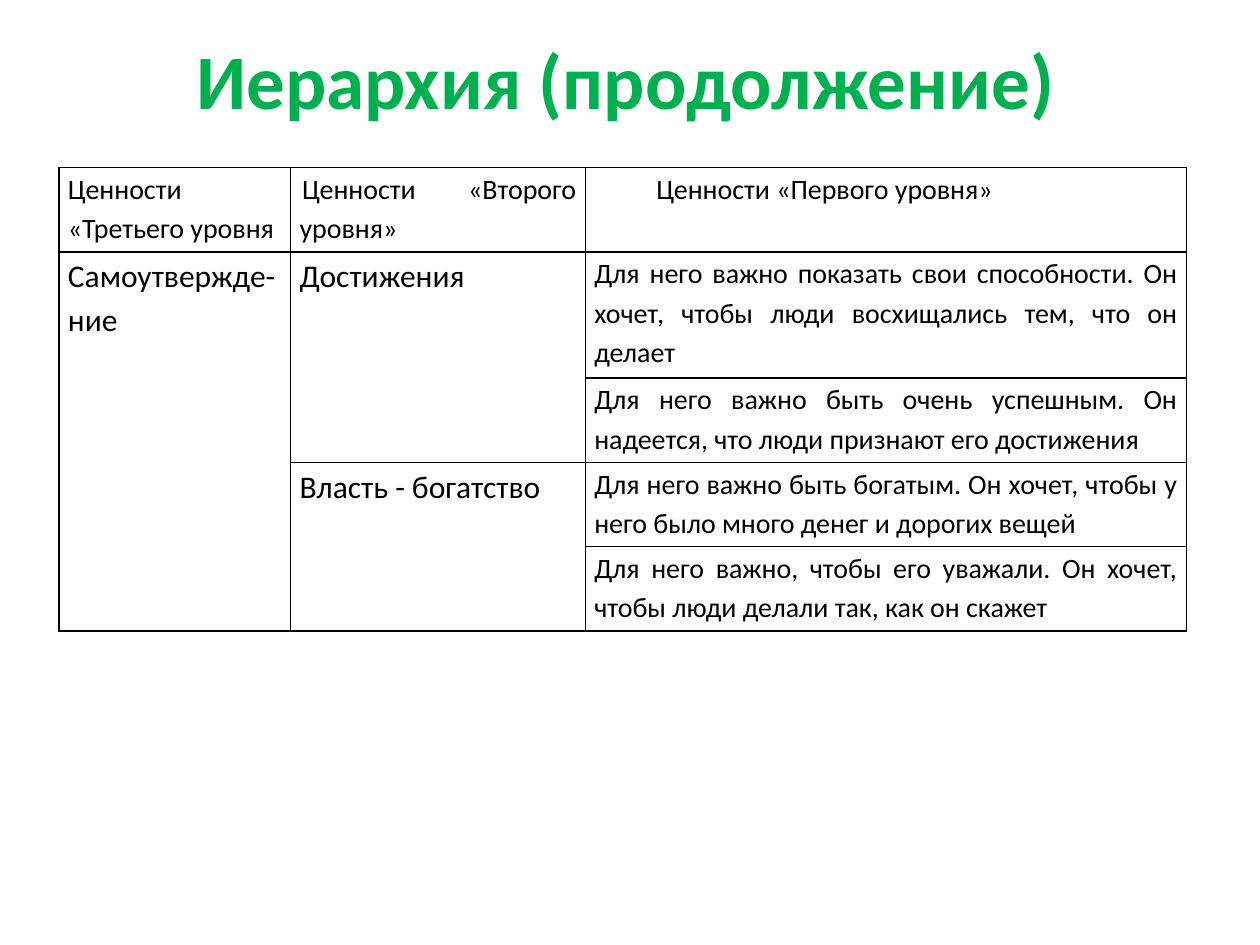
from dataclasses import dataclass

from lxml import etree
from pptx import Presentation
from pptx.dml.color import RGBColor
from pptx.enum import text
from pptx.oxml.ns import qn
from pptx.util import Cm, Pt


@dataclass(frozen=True)
class Theme:
    font: str = "Calibri"
    heading: RGBColor = RGBColor(0x00, 0xB0, 0x50)
    ink: RGBColor = RGBColor(0x00, 0x00, 0x00)
    heading_size: int = 44
    value_size: int = 18
    body_size: int = 16
    border: float = 1
    line_spacing: float = 1.15


@dataclass(frozen=True)
class Entry:
    row: int
    column: int
    wording: str
    size: int
    row_span: int = 1
    indent: float = 0


THEME = Theme()
COLUMN_WIDTHS = (4.67, 5.94, 12.12)
ROW_HEIGHTS = (1.7, 2.54, 1.7, 1.7, 1.7)

STATEMENTS = (
    "Для него важно показать свои способности. Он хочет, чтобы люди восхищались тем, что он делает",
    "Для него важно быть очень успешным. Он надеется, что люди признают его достижения",
    "Для него важно быть богатым. Он хочет, чтобы у него было много денег и дорогих вещей",
    "Для него важно, чтобы его уважали. Он хочет, чтобы люди делали так, как он скажет",
)

ENTRIES = [
    # Column headings
    Entry(0, 0, "Ценности «Третьего уровня", THEME.body_size),
    Entry(0, 1, "Ценности «Второго уровня»", THEME.body_size, indent=0.05),
    Entry(0, 2, "Ценности «Первого уровня»", THEME.body_size, indent=1.25),
    # Values of the third and second level
    Entry(1, 0, "Самоутвержде-ние", THEME.value_size, row_span=4),
    Entry(1, 1, "Достижения", THEME.value_size, row_span=2),
    Entry(3, 1, "Власть - богатство", THEME.value_size, row_span=2),
    # Statements of the first level
    *(Entry(row, 2, wording, THEME.body_size) for row, wording in enumerate(STATEMENTS, 1)),
]


def style_font(font, size: int, color: RGBColor, bold: bool = False) -> None:
    font.name = THEME.font
    font.size = Pt(size)
    font.bold = bold
    font.color.rgb = color


def frame_cell(cell) -> None:
    """Give a cell its margins, thin borders and no fill."""
    cell.margin_left = cell.margin_right = Cm(0.18)
    cell.margin_top = cell.margin_bottom = 0
    properties = cell._tc.get_or_add_tcPr()
    for side in ("a:lnL", "a:lnR", "a:lnT", "a:lnB"):
        line = etree.SubElement(properties, qn(side), w=str(Pt(THEME.border)))
        fill = etree.SubElement(line, qn("a:solidFill"))
        etree.SubElement(fill, qn("a:srgbClr"), val=str(THEME.ink))
    cell.fill.background()


def write_entry(table, entry: Entry) -> None:
    cell = table.cell(entry.row, entry.column)
    if entry.row_span > 1:
        cell.merge(table.cell(entry.row + entry.row_span - 1, entry.column))
    cell.text_frame.text = entry.wording
    paragraph = cell.text_frame.paragraphs[0]
    paragraph.alignment = text.PP_ALIGN.JUSTIFY
    paragraph.line_spacing = THEME.line_spacing
    if entry.indent:
        paragraph._p.get_or_add_pPr().set("indent", str(Cm(entry.indent)))
    style_font(paragraph.runs[0].font, entry.size, THEME.ink)


def add_heading(slide, wording: str) -> None:
    frame = slide.shapes.add_textbox(Cm(1.19), 0, Cm(22.86), Cm(3.18)).text_frame
    frame.word_wrap = True
    frame.vertical_anchor = text.MSO_ANCHOR.MIDDLE
    frame.text = wording
    paragraph = frame.paragraphs[0]
    paragraph.alignment = text.PP_ALIGN.CENTER
    style_font(paragraph.runs[0].font, THEME.heading_size, THEME.heading, bold=True)


def add_hierarchy(slide) -> None:
    table = slide.shapes.add_table(
        len(ROW_HEIGHTS), len(COLUMN_WIDTHS), Cm(1.19), Cm(3.38),
        Cm(sum(COLUMN_WIDTHS)), Cm(sum(ROW_HEIGHTS)),
    ).table
    table.first_row = table.horz_banding = False
    for column, width in zip(table.columns, COLUMN_WIDTHS):
        column.width = Cm(width)
    for row, height in zip(table.rows, ROW_HEIGHTS):
        row.height = Cm(height)
    for cell in table.iter_cells():
        frame_cell(cell)
    for entry in ENTRIES:
        write_entry(table, entry)


def main() -> None:
    presentation = Presentation()
    presentation.slide_width, presentation.slide_height = Cm(25.4), Cm(19.05)
    slide = presentation.slides.add_slide(presentation.slide_layouts[6])
    add_hierarchy(slide)
    add_heading(slide, "Иерархия (продолжение)")
    presentation.save("out.pptx")


if __name__ == "__main__":
    main()
